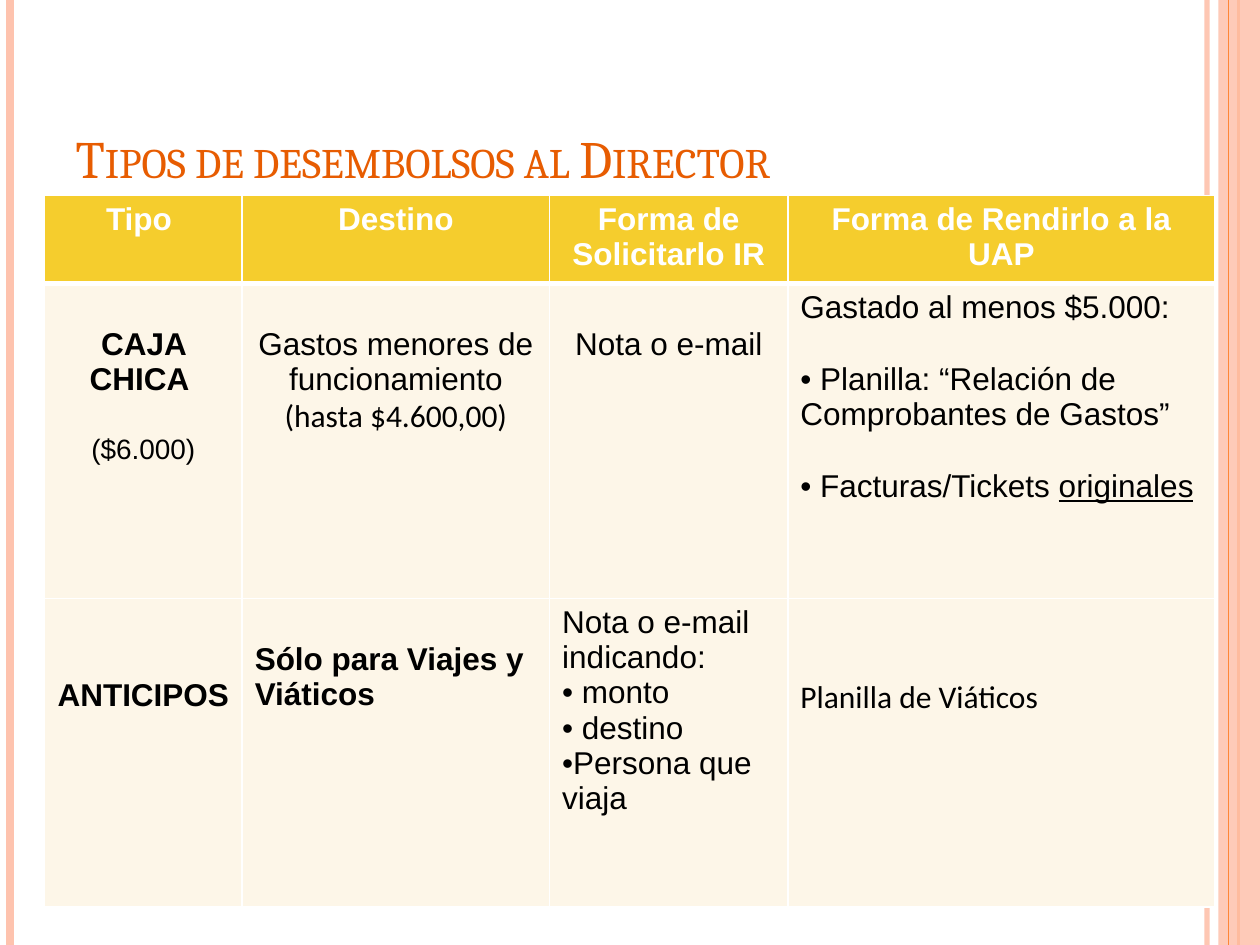
"""Build the slide on the kinds of payment made to the director."""
from lxml.etree import SubElement
from pptx import Presentation
from pptx.dml.color import RGBColor
from pptx.enum.shapes import MSO_CONNECTOR, MSO_SHAPE
from pptx.enum.text import MSO_ANCHOR, PP_ALIGN
from pptx.oxml.ns import qn
from pptx.util import Pt

LEFT, CENTER = PP_ALIGN.LEFT, PP_ALIGN.CENTER
STRAIGHT, RECTANGLE = MSO_CONNECTOR.STRAIGHT, MSO_SHAPE.RECTANGLE
WHITE = RGBColor(0xFF, 0xFF, 0xFF)
BLACK = RGBColor(0, 0, 0)
PEACH = RGBColor(0xFE, 0xC3, 0xAE)
ORANGE = RGBColor(0xFE, 0x86, 0x37)
RUST = RGBColor(0xE7, 0x5C, 0x01)
GOLD = RGBColor(0xF5, 0xCD, 0x2D)
CREAM = RGBColor(0xFD, 0xF6, 0xE8)

WIDTH, HEIGHT = 720, 540
GAP = 21
TITLE = "Tipos de desembolsos al Director"
BACK_LINES = [(689.8, 3, PEACH, 93), (5.8, 4.5, PEACH, 100), (707.8, 1.5, ORANGE, 100)]
FRONT_LINES = [(702, 0.75, ORANGE, 100)]
BAND_LEFT = 696.2

COLUMNS = [113, 175.7, 136.1, 244.1]
ROWS = [50.4, 180, 176.4]
BOLD = {"bold": True}
CALIBRI = {"name": "Calibri"}
HEADERS = ["Tipo ", "Destino", "Forma de Solicitarlo IR", "Forma de Rendirlo a la UAP"]


def line(*spans, gap=0, bullet=False):
    return {"spans": spans, "gap": gap, "bullet": bullet}


BODY = [
    [
        (CENTER, 1, [line(("CAJA CHICA ", BOLD)), line(("($6.000)", {"size": Pt(16)}), gap=1)]),
        (CENTER, 1, [line(("Gastos menores de funcionamiento", {})),
                     line(("(hasta $4.600,00)", CALIBRI))]),
        (CENTER, 1, [line(("Nota o e-mail", {}))]),
        (LEFT, 0, [line(("Gastado al menos $5.000:", {})),
                   line((" Planilla: “Relación de Comprobantes de Gastos”", {}), gap=1, bullet=True),
                   line((" Facturas/Tickets ", {}), ("originales", {"underline": True}),
                        gap=1, bullet=True)]),
    ],
    [
        (CENTER, 2, [line(("ANTICIPOS", BOLD))]),
        (LEFT, 1, [line(("Sólo para Viajes y Viáticos", BOLD))]),
        (LEFT, 0, [line(("Nota o e-mail indicando:", {})),
                   line((" monto", {}), bullet=True),
                   line((" destino", {}), bullet=True),
                   line(("Persona que viaja", {}), bullet=True)]),
        (LEFT, 2, [line(("Planilla de Viáticos", CALIBRI))]),
    ],
]


def format_font(font, color, **values):
    for name, value in values.items():
        setattr(font, name, value)
    font.color.rgb = color


def set_alpha(fill_parent, percent):
    color = fill_parent.find(".//" + qn("a:srgbClr"))
    SubElement(color, qn("a:alpha"), val=str(percent * 1000))


def add_vertical_lines(slide, lines):
    for x, weight, color, opacity in lines:
        rule = slide.shapes.add_connector(STRAIGHT, Pt(x), Pt(0), Pt(x), Pt(HEIGHT))
        rule.line.width = Pt(weight)
        rule.line.color.rgb = color
        properties = rule._element.spPr
        if opacity < 100:
            set_alpha(properties, opacity)
        SubElement(properties, qn("a:effectLst"))


def add_band(slide):
    band = slide.shapes.add_shape(RECTANGLE, Pt(BAND_LEFT), Pt(0), Pt(WIDTH - BAND_LEFT), Pt(HEIGHT))
    band.shadow.inherit = False
    band.fill.solid()
    band.fill.fore_color.rgb = PEACH
    set_alpha(band._element.spPr, 87)
    band.line.fill.background()


def add_title(slide):
    title = slide.shapes.title
    box = {"left": 36, "top": 21.6, "width": 588.2, "height": 90}
    for name, value in box.items():
        setattr(title, name, Pt(value))
    frame = title.text_frame
    frame.text = TITLE
    frame.word_wrap = True
    frame.vertical_anchor = MSO_ANCHOR.BOTTOM
    para = frame.paragraphs[0]
    para.alignment = LEFT
    span = para.runs[0]
    format_font(span.font, RUST, name="Cambria", size=Pt(30))
    span._r.get_or_add_rPr().set("cap", "small")


def add_bullet(para):
    properties = para._p.get_or_add_pPr()
    properties.set("marL", "0")
    properties.set("indent", "0")
    SubElement(properties, qn("a:buFont"), typeface="Arial")
    SubElement(properties, qn("a:buChar"), char="•")


def set_borders(cell, top, bottom):
    properties = cell._tc.get_or_add_tcPr()
    for side, weight in {"L": 1, "R": 1, "T": top, "B": bottom}.items():
        border = SubElement(properties, qn("a:ln" + side), w=str(Pt(weight)))
        fill = SubElement(border, qn("a:solidFill"))
        SubElement(fill, qn("a:srgbClr"), val=str(WHITE))


def fill_cell(cell, content, color, background):
    alignment, top_gap, paragraphs = content
    cell.fill.solid()
    cell.fill.fore_color.rgb = background
    cell.margin_top = Pt(3.6 + top_gap * GAP)
    frame = cell.text_frame
    for index, entry in enumerate(paragraphs):
        para = frame.add_paragraph() if index else frame.paragraphs[0]
        para.alignment = alignment
        if entry["gap"]:
            para.space_before = Pt(entry["gap"] * GAP)
        if entry["bullet"]:
            add_bullet(para)
        format_font(para.font, color, name="Arial", size=Pt(18))
        for text, changes in entry["spans"]:
            span = para.add_run()
            span.text = text
            values = {"name": "Arial", "size": Pt(18), "bold": False} | changes
            format_font(span.font, color, **values)


def add_payment_table(slide):
    header = [(CENTER, 0, [line((text, BOLD))]) for text in HEADERS]
    table = slide.shapes.add_table(len(ROWS), len(COLUMNS), Pt(25.4), Pt(111.6),
                                   Pt(sum(COLUMNS)), Pt(sum(ROWS))).table
    for column, width in zip(table.columns, COLUMNS):
        column.width = Pt(width)
    for row, height in zip(table.rows, ROWS):
        row.height = Pt(height)
    for row_index, contents in enumerate([header] + BODY):
        color, background = (BLACK, CREAM) if row_index else (WHITE, GOLD)
        for column_index, content in enumerate(contents):
            cell = table.cell(row_index, column_index)
            set_borders(cell, 3 if row_index == 1 else 1, 1 if row_index else 3)
            fill_cell(cell, content, color, background)


def main():
    deck = Presentation()
    deck.slide_width, deck.slide_height = Pt(WIDTH), Pt(HEIGHT)
    slide = deck.slides.add_slide(deck.slide_layouts[5])
    add_vertical_lines(slide, BACK_LINES)
    add_band(slide)
    add_vertical_lines(slide, FRONT_LINES)
    add_title(slide)
    add_payment_table(slide)
    deck.save("out.pptx")


if __name__ == "__main__":
    main()
